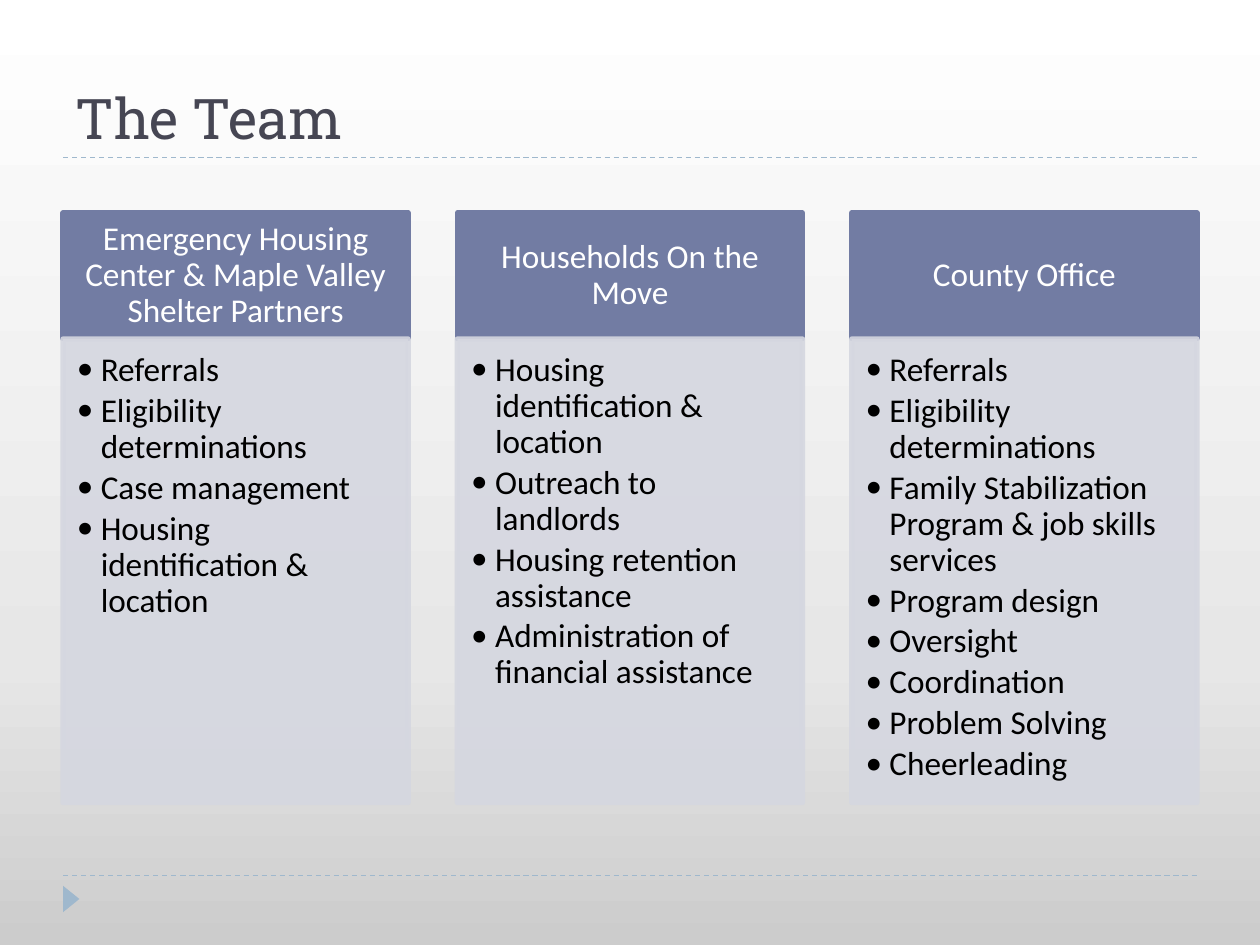
from copy import deepcopy

from lxml import etree
from pptx import Presentation
from pptx.dml.color import RGBColor
from pptx.enum import dml, shapes, text
from pptx.oxml import ns
from pptx.util import Inches, Pt

COLORS = {"title": "464653", "rule": "9FB8CD", "header": "727CA3", "panel": "D5D7E0",
          "white": "FFFFFF", "black": "000000"}
BACKGROUND = [(0, "CCCCCC"), (0.3, "E7E7E7"), (1, "FFFFFF")]
TEAMS = [
    ("Emergency Housing Center & Maple Valley Shelter Partners",
     ["Referrals", "Eligibility determinations", "Case management",
      "Housing identification & location"]),
    ("Households On the Move",
     ["Housing identification & location", "Outreach to landlords",
      "Housing retention assistance", "Administration of financial assistance"]),
    ("County Office",
     ["Referrals", "Eligibility determinations",
      "Family Stabilization Program & job skills services", "Program design",
      "Oversight", "Coordination", "Problem Solving", "Cheerleading"]),
]


def style_font(font, name, size, color):
    font.name, font.size = name, Pt(size)
    font.color.rgb = RGBColor.from_string(COLORS[color])


def add_box(left, top, height, color, insets, lines, ink):
    """Add a filled column box holding one paragraph per line."""
    box = page.shapes.add_shape(shapes.MSO_SHAPE.RECTANGLE, Inches(left), Inches(top),
                                Inches(2.74), Inches(height))
    box.shadow.inherit = False
    box.fill.solid()
    box.fill.fore_color.rgb = box.line.color.rgb = RGBColor.from_string(COLORS[color])
    box.line.width = Pt(3)
    frame = box.text_frame
    frame.word_wrap = True
    (frame.margin_left, frame.margin_top,
     frame.margin_right, frame.margin_bottom) = [Inches(inset) for inset in insets]
    frame.text = "\n".join(lines)
    for para in frame.paragraphs:
        para.line_spacing = 0.9
        for span in para.runs:
            style_font(span.font, "Calibri", 19, ink)
    return box


deck = Presentation()
deck.slide_width, deck.slide_height = Inches(10), Inches(7.5)
page = deck.slides.add_slide(deck.slide_layouts[5])

fill = page.background.fill
fill.gradient()
fill.gradient_angle = 90
stop_list = next(page.element.iter(ns.qn("a:gsLst")))
stop_list.append(deepcopy(stop_list[0]))
for stop, (position, color) in zip(fill.gradient_stops, BACKGROUND):
    stop.position = position
    stop.color.rgb = RGBColor.from_string(color)

for y in (6.95, 1.25):
    rule = page.shapes.add_connector(shapes.MSO_CONNECTOR.STRAIGHT, Inches(0.5), Inches(y),
                                     Inches(9.5), Inches(y))
    rule.line.color.rgb = RGBColor.from_string(COLORS["rule"])
    rule.line.width = Pt(0.75)
    rule.line.dash_style = dml.MSO_LINE.DASH
    etree.SubElement(rule.element.spPr, ns.qn("a:effectLst"))

marker = page.shapes.add_shape(shapes.MSO_SHAPE.ISOSCELES_TRIANGLE, Inches(0.46), Inches(7.07),
                               Inches(0.21), Inches(0.13))
marker.rotation = 90
marker.shadow.inherit = False
marker.fill.solid()
marker.fill.fore_color.rgb = RGBColor.from_string(COLORS["rule"])
marker.line.fill.background()

title = page.shapes.title
title.left, title.top, title.width, title.height = [Inches(n) for n in (0.5, 0.17, 9, 1.08)]
title.text_frame.text = "The Team"
title.text_frame.vertical_anchor = text.MSO_ANCHOR.BOTTOM
heading = title.text_frame.paragraphs[0]
heading.alignment = text.PP_ALIGN.LEFT
style_font(heading.runs[0].font, "Roboto Slab", 32, "title")

for column, (team, duties) in enumerate(TEAMS):
    left = 0.5 + column * 3.13
    header = add_box(left, 1.69, 1, "header", (0.15, 0.08, 0.15, 0.08), [team], "white")
    header.text_frame.vertical_anchor = text.MSO_ANCHOR.MIDDLE
    header.text_frame.paragraphs[0].alignment = text.PP_ALIGN.CENTER

    panel = add_box(left, 2.69, 3.68, "panel", (0.11, 0.11, 0.15, 0.17), duties, "black")
    panel.text_frame.vertical_anchor = text.MSO_ANCHOR.TOP
    for color in panel.element.spPr.iter(ns.qn("a:srgbClr")):
        etree.SubElement(color, ns.qn("a:alpha"), val="90000")
    for para in panel.text_frame.paragraphs:
        para.alignment = text.PP_ALIGN.LEFT
        para.space_after = Pt(2.85)
        properties = para._p.get_or_add_pPr()
        properties.set("marL", str(Inches(0.19)))
        properties.set("indent", str(Inches(-0.19)))
        etree.SubElement(properties, ns.qn("a:buFont"), typeface="Calibri")
        etree.SubElement(properties, ns.qn("a:buChar"), char="•")

deck.save("out.pptx")
